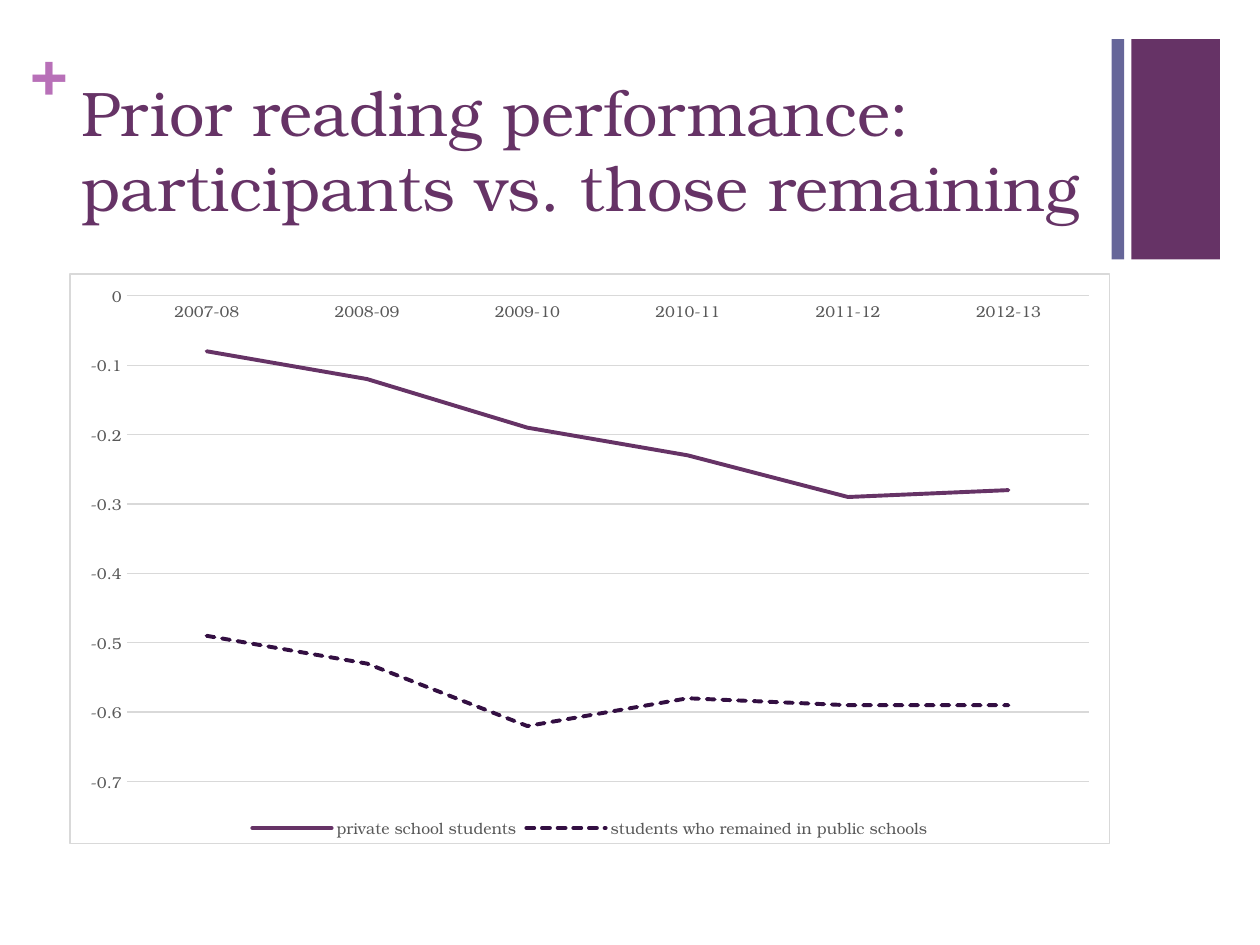
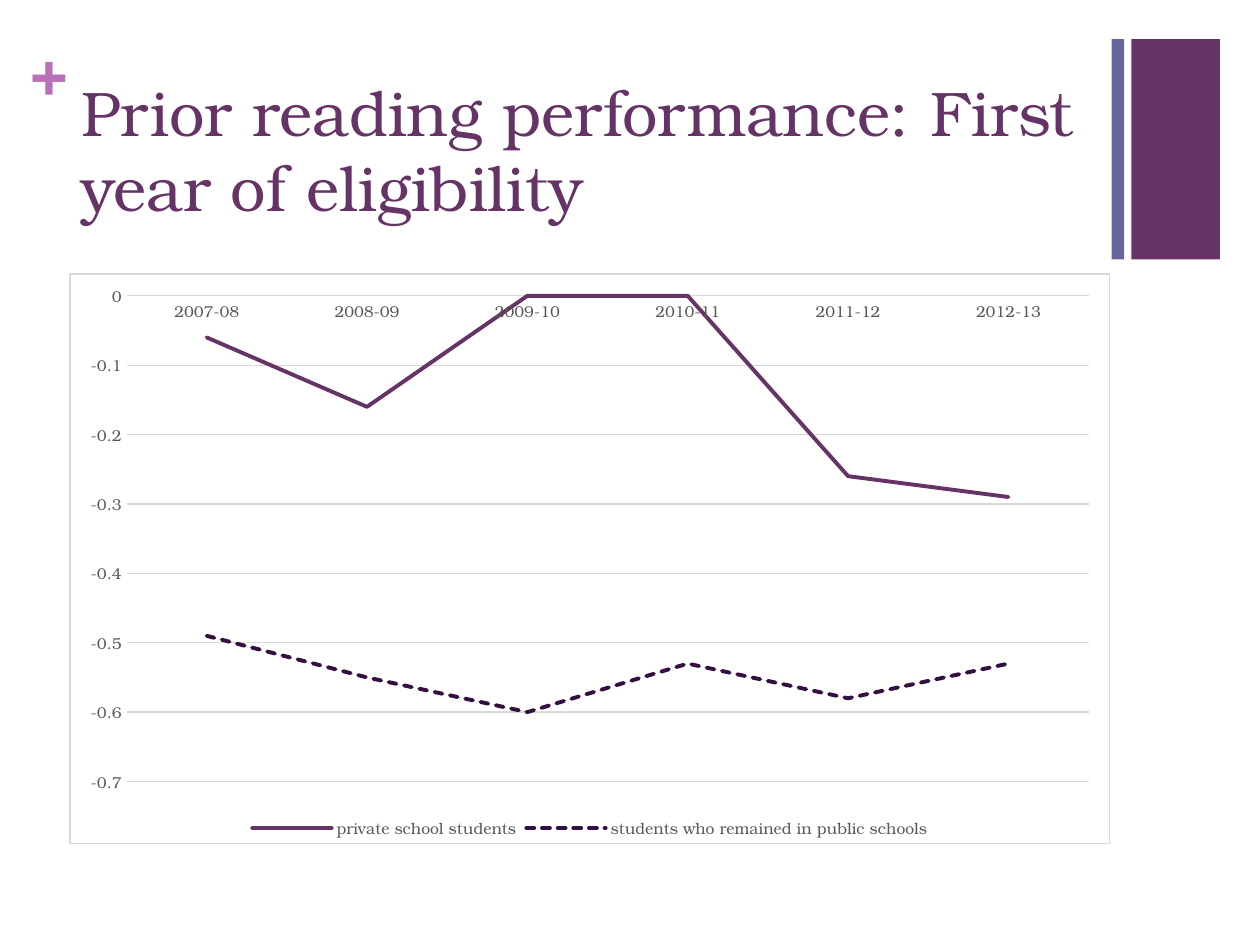
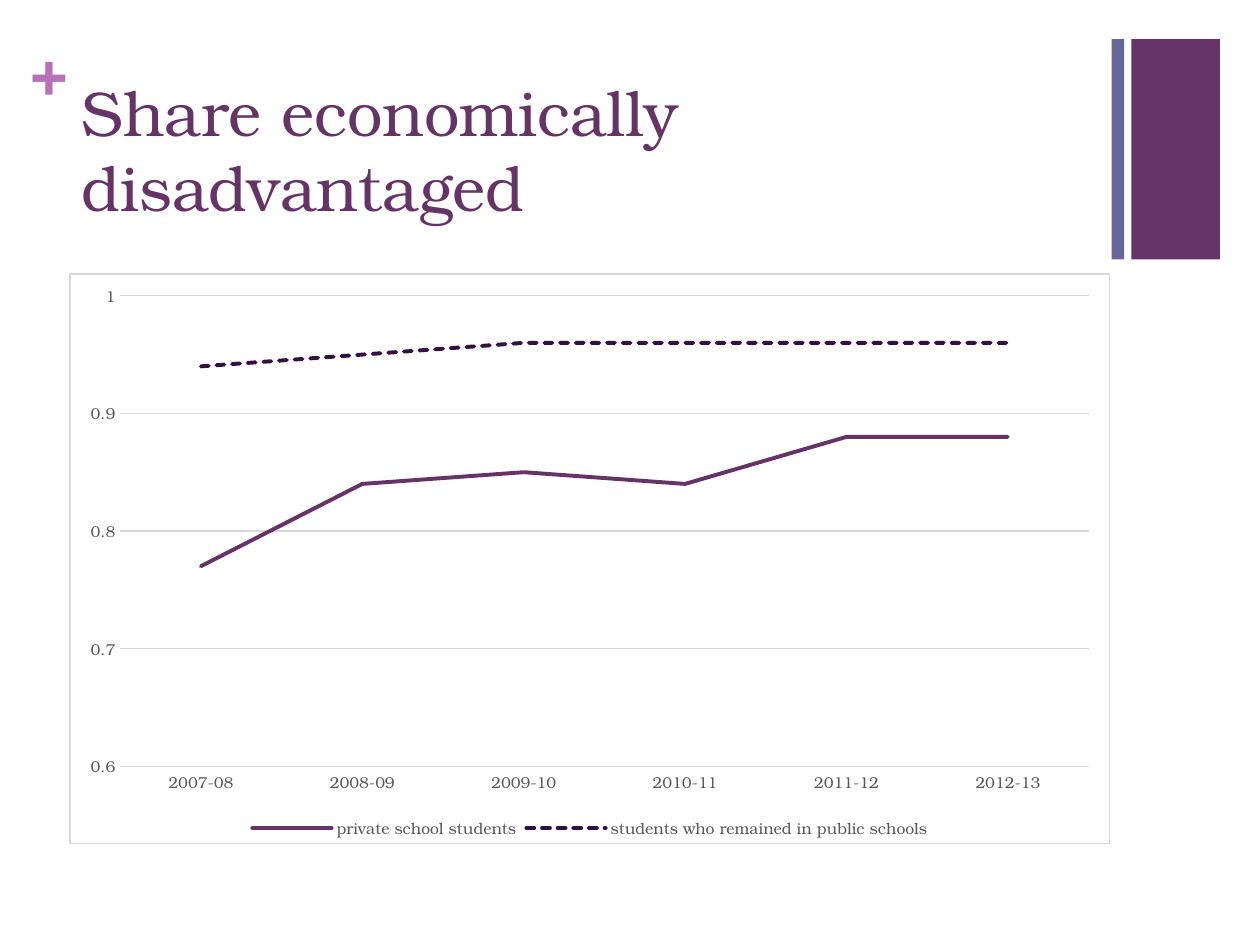
import pptx
import pptx.chart.data
import pptx.dml.color
import pptx.enum.chart
import pptx.enum.dml
import pptx.enum.shapes
import pptx.enum.text
import pptx.oxml
import pptx.util

Pt = pptx.util.Pt
FONT = "TeX Gyre Bonum"
COLORS = {
    "plum": "663366",
    "slate": "666699",
    "orchid": "B870B8",
    "dark": "330F42",
    "label": "595959",
    "grid": "D9D9D9",
    "text": "000000",
}
YEARS = ["2007-08", "2008-09", "2009-10", "2010-11", "2011-12", "2012-13"]
PRIVATE = "private school students"
PUBLIC = "students who remained in public schools"

# Title, scale (minimum, maximum, step) and values of each slide
SLIDES = [
    ("Prior reading performance: participants vs. those remaining", None,
     [-0.08, -0.12, -0.19, -0.23, -0.29, -0.28],
     [-0.49, -0.53, -0.62, -0.58, -0.59, -0.59]),
    ("Prior reading performance: First year of eligibility", None,
     [-0.06, -0.16, 0, 0, -0.26, -0.29],
     [-0.49, -0.55, -0.6, -0.53, -0.58, -0.53]),
    ("Share economically disadvantaged", (0.6, 1, 0.1),
     [0.77, 0.84, 0.85, 0.84, 0.88, 0.88],
     [0.94, 0.95, 0.96, 0.96, 0.96, 0.96]),
]
# Left edge, width and colour of the bands at the top right
BANDS = [(646.5, 50.6, "plum"), (635.2, 7.2, "slate")]
CHART_FRAME = f"""<c:spPr {pptx.oxml.ns.nsdecls('c', 'a')}>
  <a:solidFill><a:srgbClr val="FFFFFF"/></a:solidFill>
  <a:ln w="9525"><a:solidFill><a:srgbClr val="{COLORS['grid']}"/></a:solidFill></a:ln>
</c:spPr>"""
SQUARE_CORNERS = f'<c:roundedCorners {pptx.oxml.ns.nsdecls("c")} val="0"/>'


def style_font(font, size, color):
    font.name = FONT
    font.size = Pt(size)
    font.color.rgb = pptx.dml.color.RGBColor.from_string(COLORS[color])


def add_text(page, left, top, width, height, text, color, inset_x, inset_y):
    box = page.shapes.add_textbox(Pt(left), Pt(top), Pt(width), Pt(height))
    frame = box.text_frame
    frame.word_wrap = True
    frame.vertical_anchor = pptx.enum.text.MSO_ANCHOR.TOP
    frame.margin_left = frame.margin_right = Pt(inset_x)
    frame.margin_top = frame.margin_bottom = Pt(inset_y)
    span = frame.paragraphs[0].add_run()
    span.text = text
    style_font(span.font, 36, color)
    return span


deck = pptx.Presentation()
deck.slide_width, deck.slide_height = Pt(720), Pt(540)

for title, scale, private_values, public_values in SLIDES:
    page = deck.slides.add_slide(deck.slide_layouts[6])

    # Bands, plus sign and title
    for left, width, color in BANDS:
        band = page.shapes.add_shape(pptx.enum.shapes.MSO_SHAPE.RECTANGLE,
                                     Pt(left), Pt(22.3), Pt(width), Pt(126))
        band.shadow.inherit = False
        band.fill.solid()
        band.fill.fore_color.rgb = pptx.dml.color.RGBColor.from_string(COLORS[color])
        band.line.fill.background()
    plus = add_text(page, 17.3, 18, 20.9, 43.9, "+", "orchid", 0, 0)
    plus.font.bold = True
    add_text(page, 39.6, 38.2, 594.7, 87.8, title, "plum", 7.2, 3.6)

    # Line chart
    data = pptx.chart.data.CategoryChartData()
    data.categories = YEARS
    data.add_series(PRIVATE, private_values)
    data.add_series(PUBLIC, public_values)
    chart = page.shapes.add_chart(pptx.enum.chart.XL_CHART_TYPE.LINE, Pt(39.6), Pt(156.2),
                                  Pt(594.7), Pt(326.2), data).chart
    chart.has_title = False
    style_font(chart.font, 10, "text")
    chart.plots[0].vary_by_categories = False

    # Legend
    chart.has_legend = True
    chart.legend.position = pptx.enum.chart.XL_LEGEND_POSITION.BOTTOM
    chart.legend.include_in_layout = False
    style_font(chart.legend.font, 9, "label")

    # Axes and gridlines
    years, values = chart.category_axis, chart.value_axis
    for axis in (years, values):
        axis.major_tick_mark = axis.minor_tick_mark = pptx.enum.chart.XL_TICK_MARK.NONE
        style_font(axis.tick_labels.font, 9, "label")
    values.format.line.fill.background()
    values.has_major_gridlines = True
    for line in (years.format.line, values.major_gridlines.format.line):
        line.color.rgb = pptx.dml.color.RGBColor.from_string(COLORS["grid"])
        line.width = Pt(0.75)
    if scale:
        values.minimum_scale, values.maximum_scale, values.major_unit = scale

    # Series lines
    for series, color in zip(chart.plots[0].series, ("plum", "dark")):
        series.smooth = False
        series.format.line.color.rgb = pptx.dml.color.RGBColor.from_string(COLORS[color])
        series.format.line.width = Pt(2.25)
    series.format.line.dash_style = pptx.enum.dml.MSO_LINE.SQUARE_DOT
    for outline in chart.element.xpath(".//c:ser/c:spPr/a:ln"):
        outline.set("cap", "rnd")

    # Chart background and border
    chart.element.xpath("c:date1904")[0].addnext(pptx.oxml.parse_xml(SQUARE_CORNERS))
    chart.element.xpath("c:chart")[0].addnext(pptx.oxml.parse_xml(CHART_FRAME))

deck.save("out.pptx")
